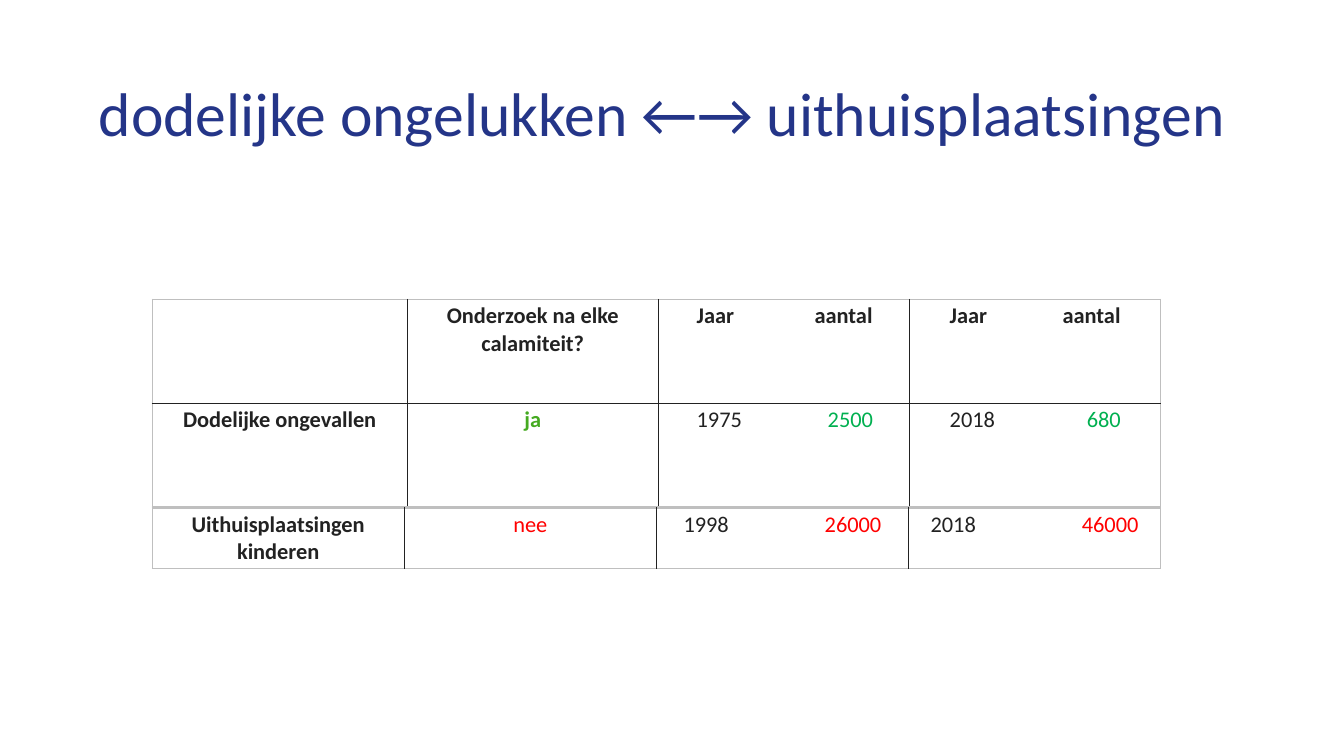
import dataclasses
import typing

import lxml.etree
import pptx
import pptx.dml.color
import pptx.enum.text
import pptx.oxml.ns
import pptx.util

Inches = pptx.util.Inches
Align = pptx.enum.text.PP_ALIGN
qn = pptx.oxml.ns.qn

HUES = {
    "title": "243588",
    "ink": "222222",
    "edge": "BFBFBF",
    "yes": "45AA21",
    "good": "00B050",
    "bad": "FF0000",
}
INSETS = ("margin_left", "margin_top", "margin_right", "margin_bottom")


@dataclasses.dataclass
class Word:
    text: str
    hue: str = "ink"
    bold: bool = True


@dataclasses.dataclass
class Entry:
    """Cell text; a pair of words starts at the two given offsets."""
    words: list[Word]
    starts: tuple[float, ...] = ()


@dataclasses.dataclass
class Grid:
    top: float
    height: float
    widths: list[float]
    rows: list[list[Entry]]


def plain(text: str, hue: str = "ink", bold: bool = True) -> Entry:
    return Entry([Word(text, hue, bold)])


def pair(left: str, right: str, first: float, second: float,
         hue: str = "ink", bold: bool = False) -> Entry:
    return Entry([Word(left, "ink", bold), Word(right, hue, bold)], (first, second))


GRIDS = [
    Grid(2.97, 1.03, [2.53, 2.49, 2.49, 2.49], [
        [Entry([]), plain("Onderzoek na elke calamiteit?"),
         pair("Jaar", "aantal", 0.38, 1.55, bold=True),
         pair("Jaar", "aantal", 0.4, 1.52, bold=True)],
        [plain("Dodelijke ongevallen"), plain("ja", "yes"),
         pair("1975", "2500", 0.38, 1.68, "good"),
         pair("2018", "680", 0.4, 1.76, "good")],
    ]),
    Grid(5.04, 0.58, [2.5] * 4, [
        [plain("Uithuisplaatsingen kinderen"), plain("nee", "bad", False),
         pair("1998", "26000", 0.27, 1.67, "bad"),
         pair("2018", "46000", 0.22, 1.72, "bad")],
    ]),
]


def assign(target: typing.Any, values: dict[str, typing.Any]) -> None:
    for name, value in values.items():
        setattr(target, name, value)


def style(font: typing.Any, size: float, hue: str, bold: bool) -> None:
    assign(font, {"name": "Calibri", "size": pptx.util.Pt(size), "bold": bold})
    font.color.rgb = pptx.dml.color.RGBColor.from_string(HUES[hue])


def border(cell: typing.Any, hues: dict[str, str]) -> None:
    props = cell._tc.get_or_add_tcPr()
    for place, (side, hue) in enumerate(hues.items()):
        line = lxml.etree.Element(qn(f"a:ln{side}"), w=str(pptx.util.Pt(1)))
        fill = lxml.etree.SubElement(line, qn("a:solidFill"))
        lxml.etree.SubElement(fill, qn("a:srgbClr"), val=HUES[hue])
        props.insert(place, line)


def write(cell: typing.Any, entry: Entry) -> None:
    left = entry.starts[0] if entry.starts else 0.05
    assign(cell, dict(zip(INSETS, map(Inches, (left, 0.03, 0.05, 0.03)))))
    para = cell.text_frame.paragraphs[0]
    para.alignment = Align.LEFT if entry.starts else Align.CENTER
    if entry.starts:
        tabs = lxml.etree.SubElement(para._p.get_or_add_pPr(), qn("a:tabLst"))
        gap = Inches(entry.starts[1] - left)
        lxml.etree.SubElement(tabs, qn("a:tab"), pos=str(gap), algn="l")
    for index, word in enumerate(entry.words):
        run = para.add_run()
        run.text = "\t" * index + word.text
        style(run.font, 16, word.hue, word.bold)


def draw(slide: typing.Any, grid: Grid) -> None:
    count, wide = len(grid.rows), len(grid.widths)
    table = slide.shapes.add_table(
        count, wide, Inches(1.51), Inches(grid.top),
        Inches(10), Inches(grid.height * count)).table
    assign(table, {"first_row": False, "horz_banding": False})
    for column, width in zip(table.columns, grid.widths):
        column.width = Inches(width)
    for r, row in enumerate(grid.rows):
        table.rows[r].height = Inches(grid.height)
        for c, entry in enumerate(row):
            cell = table.cell(r, c)
            cell.fill.background()
            write(cell, entry)
            # Outer edges are grey, inner lines are dark
            outer = {"L": c == 0, "R": c == wide - 1,
                     "T": r == 0, "B": r == count - 1}
            border(cell, {side: "edge" if out else "ink"
                          for side, out in outer.items()})


def main() -> None:
    deck = pptx.Presentation()
    assign(deck, {"slide_width": Inches(13.33), "slide_height": Inches(7.5)})
    slide = deck.slides.add_slide(deck.slide_layouts[5])

    # Title
    title = slide.shapes.title
    assign(title, dict(zip(("left", "top", "width", "height"),
                           map(Inches, (0.92, 0.48, 11.49, 1.25)))))
    frame = title.text_frame
    frame.text = "dodelijke ongelukken ←→ uithuisplaatsingen"
    assign(frame, {"word_wrap": True,
                   "auto_size": pptx.enum.text.MSO_AUTO_SIZE.NONE,
                   "vertical_anchor": pptx.enum.text.MSO_ANCHOR.MIDDLE})
    assign(frame, dict.fromkeys(INSETS, Inches(0.06)))
    frame.paragraphs[0].alignment = Align.LEFT
    style(frame.paragraphs[0].runs[0].font, 44, "title", False)

    # Tables
    for grid in GRIDS:
        draw(slide, grid)

    deck.save("out.pptx")


if __name__ == "__main__":
    main()
